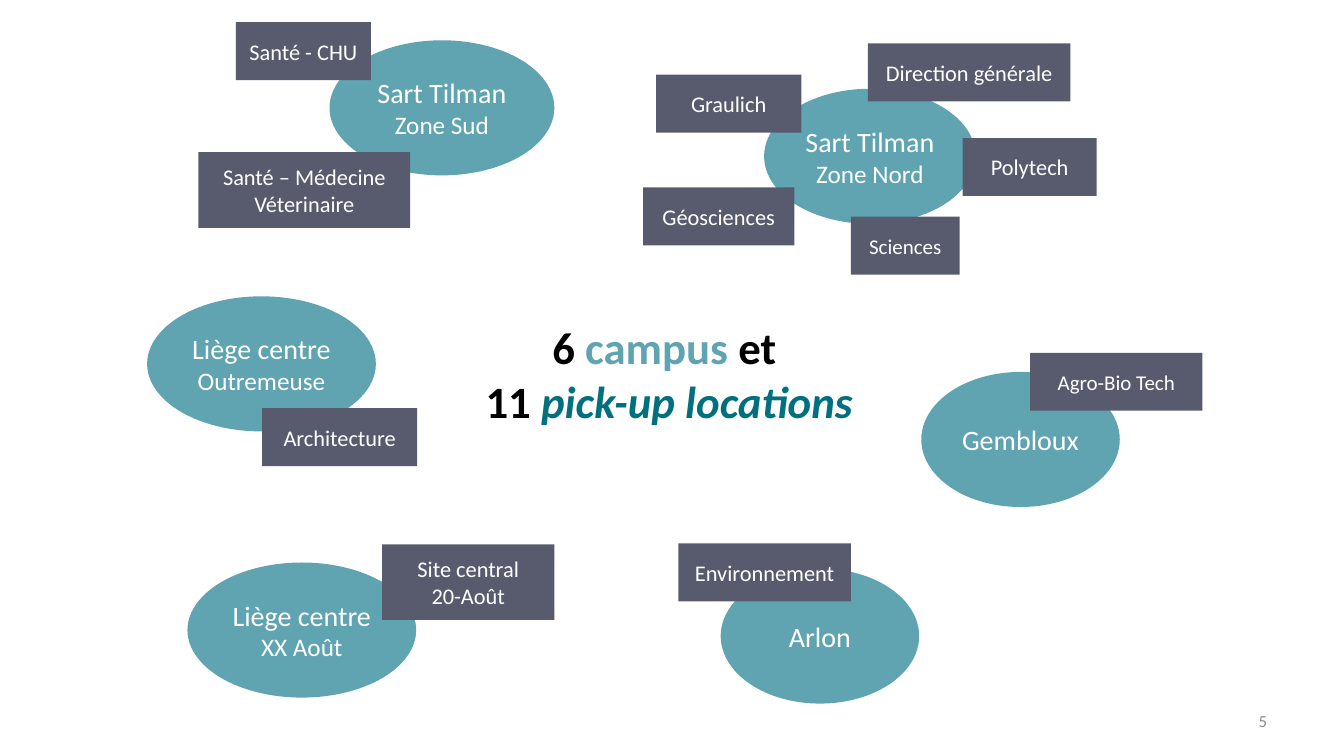
from pptx import Presentation
from pptx.dml.color import RGBColor
from pptx.enum.shapes import MSO_SHAPE
from pptx.enum.text import MSO_ANCHOR, MSO_AUTO_SIZE, PP_ALIGN
from pptx.util import Pt

TEAL = RGBColor(0x5F, 0xA4, 0xB0)
DARK_TEAL = RGBColor(0x00, 0x70, 0x7F)
SLATE = RGBColor(0x58, 0x5B, 0x6E)
WHITE = RGBColor(0xFF, 0xFF, 0xFF)
BLACK = RGBColor(0x00, 0x00, 0x00)
GREY = RGBColor(0x8C, 0x8C, 0x8C)


def add_text(para, text, size=16, color=WHITE, bold=False, italic=False, align=PP_ALIGN.CENTER):
    para.alignment = align
    span = para.add_run()
    span.text = text
    span.font.name = "Calibri"
    span.font.size = Pt(size)
    span.font.color.rgb = color
    span.font.bold = bold
    span.font.italic = italic


def add_label(page, kind, fill, bounds, lines):
    box = page.shapes.add_shape(kind, *map(Pt, bounds))
    box.shadow.inherit = False
    box.fill.solid()
    box.fill.fore_color.rgb = fill
    box.line.fill.background()
    frame = box.text_frame
    frame.word_wrap = True
    frame.vertical_anchor = MSO_ANCHOR.MIDDLE
    for index, (text, size) in enumerate(lines):
        para = frame.add_paragraph() if index else frame.paragraphs[0]
        add_text(para, text, size=size)


deck = Presentation()
deck.slide_width, deck.slide_height = Pt(960), Pt(540)
page = deck.slides.add_slide(deck.slide_layouts[5])

title = page.shapes.title
title.left, title.top, title.width, title.height = Pt(327.6), Pt(212.4), Pt(301), Pt(109.4)
heading = title.text_frame
heading.word_wrap = True
heading.auto_size = MSO_AUTO_SIZE.NONE
heading.vertical_anchor = MSO_ANCHOR.MIDDLE
first, second = heading.paragraphs[0], heading.add_paragraph()
add_text(first, "6 ", size=32, color=BLACK, bold=True)
add_text(first, "campus", size=32, color=TEAL, bold=True)
add_text(first, " et ", size=32, color=BLACK, bold=True)
add_text(second, "11 ", size=32, color=BLACK, bold=True)
add_text(second, "pick-up locations", size=32, color=DARK_TEAL, bold=True, italic=True)

CAMPUS_HEIGHT = 96.5
campuses = [
    (545.8, 63.4, 151.2, ["Sart Tilman", "Zone Nord"]),
    (235.4, 28.8, 160.6, ["Sart Tilman", "Zone Sud"]),
    (658.1, 265.7, 141.8, ["Gembloux"]),
    (514.8, 406.1, 141.8, ["Arlon"]),
    (133.9, 401.8, 163.4, ["Liège centre", "XX Août"]),
    (105.1, 211.7, 163.4, ["Liège centre", "Outremeuse"]),
]
for left, top, width, names in campuses:
    add_label(page, MSO_SHAPE.OVAL, TEAL, (left, top, width, CAMPUS_HEIGHT), zip(names, (20, 18)))

LOW, TALL = 41.4, 54
locations = [
    (735.8, 252, 123.1, LOW, 15, ["Agro-Bio Tech"]),
    (484.6, 388.1, 123.1, LOW, 16, ["Environnement"]),
    (168.5, 15.8, 96.5, LOW, 16, ["Santé - CHU"]),
    (468.7, 53.3, 103.7, LOW, 16, ["Graulich"]),
    (607.7, 154.8, 77.8, LOW, 15, ["Sciences"]),
    (687.6, 98.6, 95.8, LOW, 16, ["Polytech"]),
    (459.4, 133.9, 108, LOW, 16, ["Géosciences"]),
    (619.9, 31, 144.7, LOW, 16, ["Direction générale"]),
    (187.2, 291.6, 110.9, LOW, 16, ["Architecture"]),
    (272.9, 388.8, 123.1, TALL, 16, ["Site central", "20-Août"]),
    (141.8, 108.7, 151.2, TALL, 16, ["Santé – Médecine Véterinaire"]),
]
for left, top, width, height, size, names in locations:
    lines = [(name, size) for name in names]
    add_label(page, MSO_SHAPE.RECTANGLE, SLATE, (left, top, width, height), lines)

number = page.shapes.add_textbox(Pt(688.3), Pt(500.4), Pt(223.9), Pt(28.8)).text_frame
number.word_wrap = True
number.vertical_anchor = MSO_ANCHOR.MIDDLE
add_text(number.paragraphs[0], "5", size=12, color=GREY, align=PP_ALIGN.RIGHT)

deck.save("out.pptx")
